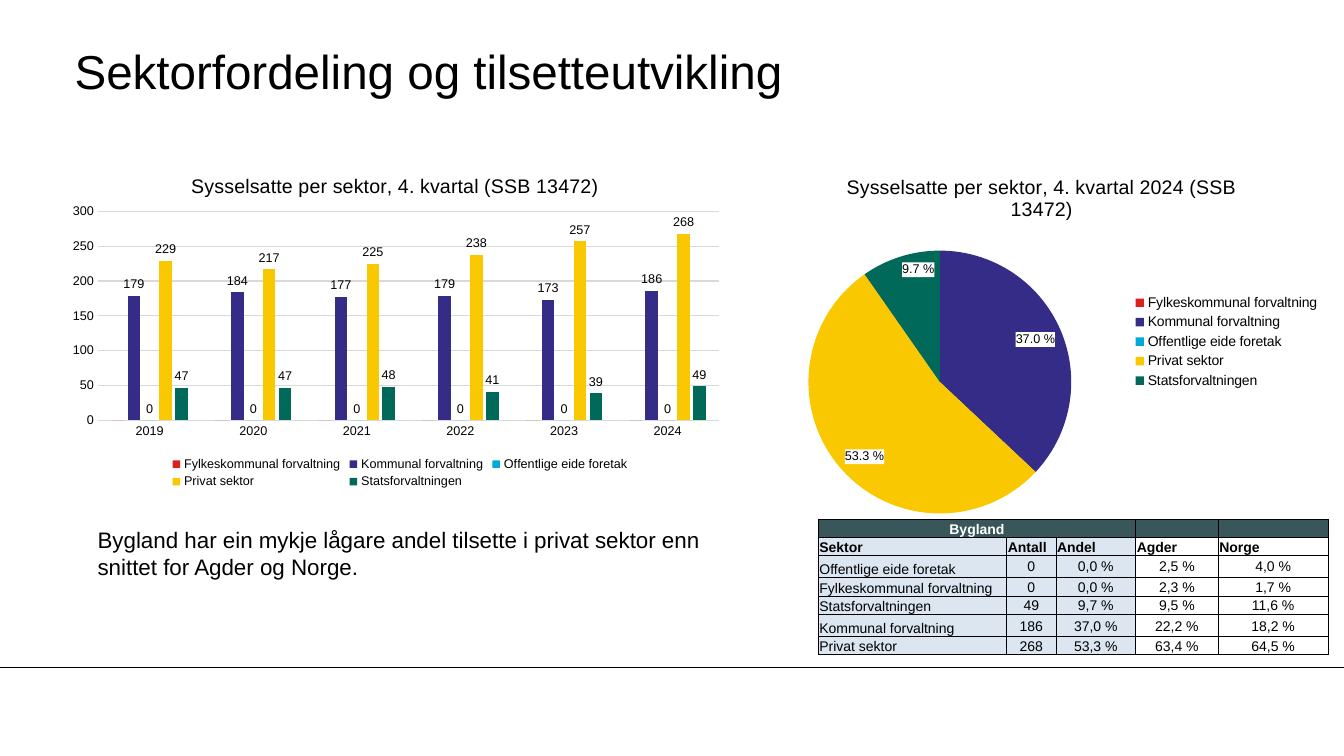
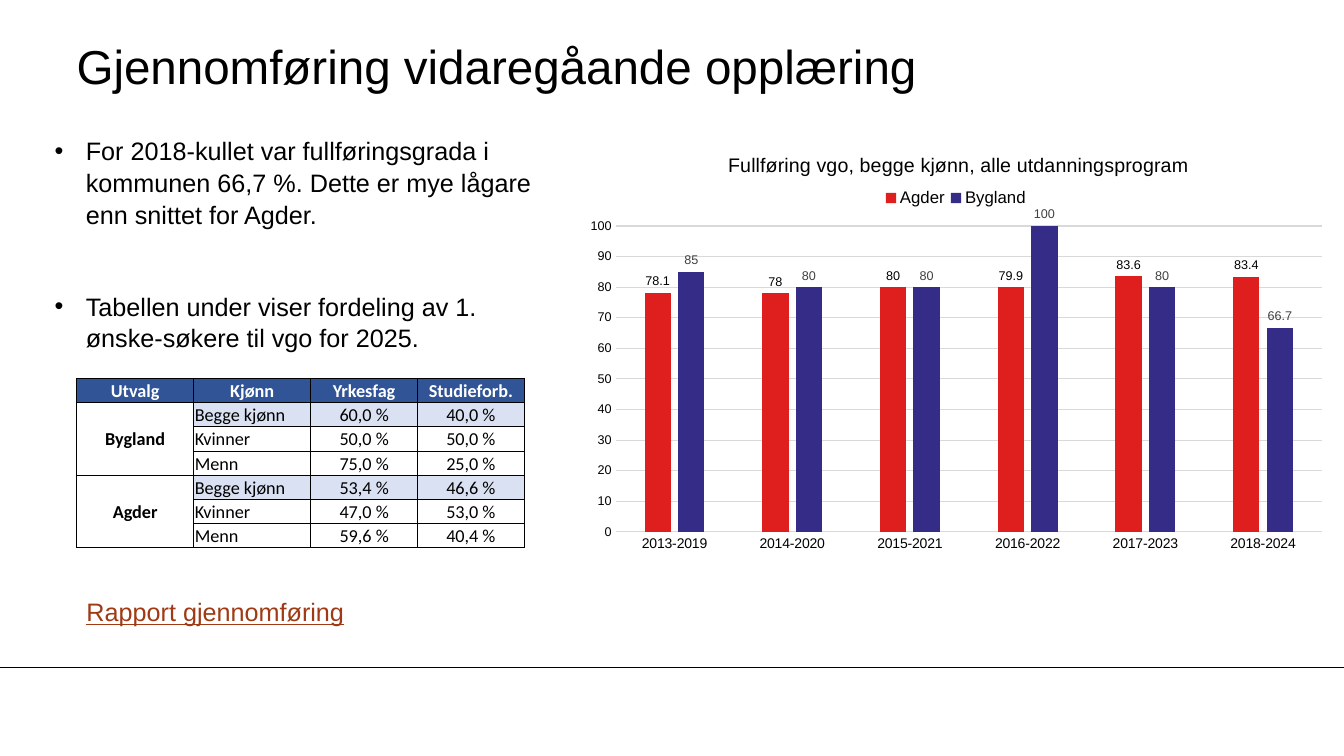
from lxml.etree import SubElement
from pptx import Presentation
from pptx.chart.data import CategoryChartData
from pptx.dml.color import RGBColor
from pptx.enum.chart import XL_CHART_TYPE as ChartType
from pptx.enum.chart import XL_LABEL_POSITION as LabelPosition
from pptx.enum.chart import XL_LEGEND_POSITION as LegendPosition
from pptx.enum.chart import XL_TICK_MARK as TickMark
from pptx.enum.shapes import MSO_CONNECTOR as Connector
from pptx.enum.text import MSO_ANCHOR as Anchor
from pptx.enum.text import MSO_AUTO_SIZE as AutoSize
from pptx.enum.text import PP_ALIGN as Align
from pptx.oxml import parse_xml
from pptx.oxml.ns import nsdecls, qn
from pptx.util import Cm, Pt

BLACK, WHITE, GREY = "000000", "FFFFFF", "D9D9D9"
RED, INDIGO, BLUE, YELLOW, GREEN = "DF1F1D", "342C86", "00A9DA", "FAC800", "00695A"
MARGINS = ("margin_left", "margin_top", "margin_right", "margin_bottom")


def style_font(font, size, color=BLACK, **values):
    for name, value in {"name": "Arial", "size": Pt(size), **values}.items():
        setattr(font, name, value)
    font.color.rgb = RGBColor.from_string(color)


def place_part(parent, index, box, target=""):
    for old in parent.findall(qn("c:layout")):
        parent.remove(old)
    layout = parse_xml(f"<c:layout {nsdecls('c')}><c:manualLayout/></c:layout>")
    values = [("layoutTarget", target)] if target else []
    values += [("xMode", "edge"), ("yMode", "edge"), *zip("xywh", map(str, box))]
    for name, value in values:
        SubElement(layout[0], qn(f"c:{name}")).set("val", value)
    parent.insert(index, layout)


presentation = Presentation()
presentation.slide_width, presentation.slide_height = Cm(33.87), Cm(19.05)

titles = [
    (5, "Sektorfordeling og tilsetteutvikling", 1.88, 0.81),
    (1, "Gjennomføring vidaregåande opplæring", 1.93, 0.69),
]
slides = []
for layout_index, text, left, top in titles:
    slide = presentation.slides.add_slide(presentation.slide_layouts[layout_index])
    slides.append(slide)
    title = slide.shapes.title
    title.left, title.top, title.width, title.height = map(Cm, (left, top, 28.19, 1.91))
    frame = title.text_frame
    for name in MARGINS:
        setattr(frame, name, 0)
    frame.auto_size, frame.vertical_anchor = AutoSize.NONE, Anchor.MIDDLE
    frame.text = text
    frame.paragraphs[0].alignment = Align.LEFT
    style_font(frame.paragraphs[0].runs[0].font, 34)
    line = slide.shapes.add_connector(Connector.STRAIGHT, 0, Cm(16.81), Cm(33.87), Cm(16.81))
    line.line.width = Pt(0.75)
    line.line.color.rgb = RGBColor.from_string(BLACK)
    SubElement(line.element.spPr, qn("a:effectLst"))

sector_slide, completion_slide = slides

body = completion_slide.placeholders[1]
body.left, body.top, body.width, body.height = map(Cm, (1.12, 3.25, 13.13, 5.64))
body.text_frame.auto_size = AutoSize.NONE
body.text_frame.text = (
    "For 2018-kullet var fullføringsgrada i kommunen 66,7 %. Dette er mye lågare enn snittet for Agder.\n"
    "Tabellen under viser fordeling av 1. ønske-søkere til vgo for 2025."
)
for paragraph, space in zip(body.text_frame.paragraphs, (0, 43)):
    properties = paragraph._p.get_or_add_pPr()
    properties.set("marL", str(Cm(0.79)))
    properties.set("indent", str(-Cm(0.79)))
    paragraph.space_before, paragraph.line_spacing = Pt(space), 1.05
    style_font(paragraph.runs[0].font, 18)

notes = [
    (sector_slide, (2.21, 13.13, 16.28, 1.63), 16, BLACK, False,
     "Bygland har ein mykje lågare andel tilsette i privat sektor enn snittet for Agder og Norge."),
    (completion_slide, (1.93, 14.91, 7.14, 1.02), 18, "9F3A14", True, "Rapport gjennomføring"),
]
for slide, box, size, color, underline, text in notes:
    frame = slide.shapes.add_textbox(*map(Cm, box)).text_frame
    frame.word_wrap = True
    frame.text = text
    style_font(frame.paragraphs[0].runs[0].font, size, color, underline=underline)

sectors = ["Fylkeskommunal forvaltning", "Kommunal forvaltning", "Offentlige eide foretak",
           "Privat sektor", "Statsforvaltningen"]
sector_colors = [RED, INDIGO, BLUE, YELLOW, GREEN]
sector_values = [[0] * 6, [179, 184, 177, 179, 173, 186], [0] * 6,
                 [229, 217, 225, 238, 257, 268], [47, 47, 48, 41, 39, 49]]
charts = [
    {
        "slide": sector_slide,
        "kind": ChartType.COLUMN_CLUSTERED,
        "box": (1.5, 3.84, 16.99, 8.64),
        "title": "Sysselsatte per sektor, 4. kvartal (SSB 13472)",
        "title_at": (0.19, 0.05),
        "plot_at": (0.057, 0.172, 0.922, 0.61),
        "legend": (LegendPosition.BOTTOM, 9, (0.16, 0.88, 0.69, 0.11)),
        "categories": [str(year) for year in range(2019, 2025)],
        "series": list(zip(sectors, sector_values)),
        "colors": sector_colors,
        "label_colors": [None] + [BLACK] * 4,
        "axis": (300, 50, 9),
    },
    {
        "slide": sector_slide,
        "kind": ChartType.PIE,
        "box": (18.92, 3.84, 14.53, 9.45),
        "title": "Sysselsatte per sektor, 4. kvartal 2024 (SSB 13472)",
        "title_at": (0.16, 0.05),
        "plot_at": (0.1, 0.262, 0.456, 0.701),
        "legend": (LegendPosition.RIGHT, 10, (0.66, 0.37, 0.33, 0.27)),
        "categories": sectors,
        "series": [("Andel", [0, 37, 0, 53.3, 9.7])],
        "colors": sector_colors,
    },
    {
        "slide": completion_slide,
        "kind": ChartType.COLUMN_CLUSTERED,
        "box": (14.5, 3.25, 19.18, 10.87),
        "title": "Fullføring vgo, begge kjønn, alle utdanningsprogram",
        "title_at": (0.196, 0.045),
        "plot_at": (0.053, 0.225, 0.928, 0.709),
        "legend": (LegendPosition.TOP, 12, (0.4, 0.13, 0.2, 0.06)),
        "categories": [f"{year}-{year + 6}" for year in range(2013, 2019)],
        "series": [("Agder", [78.1, 78, 80, 79.9, 83.6, 83.4]),
                   ("Bygland", [85, 80, 80, 100, 80, 66.7])],
        "colors": [RED, INDIGO],
        "label_colors": [BLACK, "404040"],
        "axis": (100, 10, 10),
    },
]
for item in charts:
    data = CategoryChartData()
    data.categories = item["categories"]
    for name, values in item["series"]:
        data.add_series(name, values)
    shape = item["slide"].shapes.add_chart(item["kind"], *map(Cm, item["box"]), data)
    chart = shape.chart
    style_font(chart.font, 10)
    chart.has_title = chart.has_legend = True
    chart.chart_title.text_frame.text = item["title"]
    style_font(chart.chart_title.text_frame.paragraphs[0].runs[0].font, 14, bold=False)
    position, legend_size, legend_at = item["legend"]
    chart.legend.position = position
    chart.legend.include_in_layout = False
    style_font(chart.legend.font, legend_size)
    parts = chart._chartSpace.chart
    place_part(parts.find(qn("c:title")), 1, item["title_at"])
    place_part(parts.find(qn("c:legend")), 1, legend_at)
    place_part(parts.find(qn("c:plotArea")), 0, item["plot_at"], "inner")

    plot = chart.plots[0]
    is_pie = item["kind"] == ChartType.PIE
    plot.vary_by_categories = is_pie
    if is_pie:
        series = plot.series[0]
        for index, color in enumerate(item["colors"]):
            fill = series.points[index].format.fill
            fill.solid()
            fill.fore_color.rgb = RGBColor.from_string(color)
        labels = series.data_labels
        for name, value in {"show_value": False, "show_percentage": True, "number_format": "0.0\\ %",
                            "number_format_is_linked": False,
                            "position": LabelPosition.INSIDE_END}.items():
            setattr(labels, name, value)
        style_font(labels.font, 9)
        labels._element.find(qn("c:numFmt")).addnext(parse_xml(
            f"<c:spPr {nsdecls('c', 'a')}><a:solidFill><a:srgbClr val='{WHITE}'/></a:solidFill></c:spPr>"))
        for place, index in enumerate((0, 2)):
            labels._element.insert(place, parse_xml(
                f"<c:dLbl {nsdecls('c')}><c:idx val='{index}'/><c:delete val='1'/></c:dLbl>"))
        continue

    plot.gap_width, plot.overlap = 219, -27
    for series, color, label_color in zip(plot.series, item["colors"], item["label_colors"]):
        series.format.fill.solid()
        series.format.fill.fore_color.rgb = RGBColor.from_string(color)
        if label_color:
            labels = series.data_labels
            labels.show_value, labels.position = True, LabelPosition.OUTSIDE_END
            style_font(labels.font, 9, label_color)
    maximum, step, category_size = item["axis"]
    value_axis, category_axis = chart.value_axis, chart.category_axis
    for name, value in {"minimum_scale": 0, "maximum_scale": maximum, "major_unit": step}.items():
        setattr(value_axis, name, value)
    for axis, size in ((value_axis, 9), (category_axis, category_size)):
        axis.major_tick_mark = axis.minor_tick_mark = TickMark.NONE
        style_font(axis.tick_labels.font, size)
    value_axis.tick_labels.number_format = "#,##0"
    value_axis.tick_labels.number_format_is_linked = False
    value_axis.format.line.fill.background()
    for line_format in (value_axis.major_gridlines.format.line, category_axis.format.line):
        line_format.width = Pt(0.75)
        line_format.color.rgb = RGBColor.from_string(GREY)

tables = [
    {
        "slide": sector_slide,
        "at": (20.62, 13.08),
        "columns": [4.75, 1.24, 2.01, 2.08, 2.77],
        "heights": [0.46, 0.46, 0.55, 0.48, 0.46, 0.55, 0.46],
        "rows": [
            ["Bygland", "", "", "", ""],
            ["Sektor", "Antall", "Andel", "Agder", "Norge"],
            ["Offentlige eide foretak", "0", "0,0 %", "2,5 %", "4,0 %"],
            ["Fylkeskommunal forvaltning", "0", "0,0 %", "2,3 %", "1,7 %"],
            ["Statsforvaltningen", "49", "9,7 %", "9,5 %", "11,6 %"],
            ["Kommunal forvaltning", "186", "37,0 %", "22,2 %", "18,2 %"],
            ["Privat sektor", "268", "53,3 %", "63,4 %", "64,5 %"],
        ],
        "merges": [((0, 0), (0, 2))],
        "font": ("Arial", 10),
        "fills": ("39575B", "DCE6F1"),
        "tinted": lambda row, column: column < 3,
        "bold": lambda row, column: row == 1,
        "left": lambda row, column: row == 1 or column == 0,
        "middle": lambda row, column: row > 1 and column > 0,
    },
    {
        "slide": completion_slide,
        "at": (1.93, 9.53),
        "columns": [2.95, 2.95, 2.69, 2.69],
        "heights": [0.61] * 7,
        "rows": [
            ["Utvalg", "Kjønn", "Yrkesfag", "Studieforb."],
            ["Bygland", "Begge kjønn", "60,0 %", "40,0 %"],
            ["", "Kvinner", "50,0 %", "50,0 %"],
            ["", "Menn", "75,0 %", "25,0 %"],
            ["Agder", "Begge kjønn", "53,4 %", "46,6 %"],
            ["", "Kvinner", "47,0 %", "53,0 %"],
            ["", "Menn", "59,6 %", "40,4 %"],
        ],
        "merges": [((1, 0), (3, 0)), ((4, 0), (6, 0))],
        "font": ("Calibri", 13),
        "fills": ("305496", "D9E1F2"),
        "tinted": lambda row, column: row in (1, 4) and column > 0,
        "bold": lambda row, column: column == 0,
        "left": lambda row, column: column == 1,
        "middle": lambda row, column: column == 0,
    },
]
for item in tables:
    widths, heights = item["columns"], item["heights"]
    shape = item["slide"].shapes.add_table(
        len(heights), len(widths), *map(Cm, item["at"]), Cm(sum(widths)), Cm(sum(heights)))
    table = shape.table
    table.first_row = table.horz_banding = False
    for column, width in zip(table.columns, widths):
        column.width = Cm(width)
    for row, height in zip(table.rows, heights):
        row.height = Cm(height)
    font_name, size = item["font"]
    header_fill, tint = item["fills"]
    for row_index, texts in enumerate(item["rows"]):
        for column_index, text in enumerate(texts):
            cell, spot = table.cell(row_index, column_index), (row_index, column_index)
            is_header = row_index == 0
            for name, margin in zip(MARGINS, (0.03, 0.03, 0.03, 0)):
                setattr(cell, name, Cm(margin))
            is_middle = not is_header and item["middle"](*spot)
            cell.vertical_anchor = Anchor.MIDDLE if is_middle else Anchor.BOTTOM
            for side in "LRTB":
                cell._tc.get_or_add_tcPr().append(parse_xml(
                    f"<a:ln{side} {nsdecls('a')} w='{Pt(0.5)}'><a:solidFill>"
                    f"<a:srgbClr val='{BLACK}'/></a:solidFill></a:ln{side}>"))
            cell.fill.solid()
            cell.fill.fore_color.rgb = RGBColor.from_string(
                header_fill if is_header else tint if item["tinted"](*spot) else WHITE)
            paragraph = cell.text_frame.paragraphs[0]
            if not text:
                SubElement(paragraph._p, qn("a:endParaRPr")).set("sz", str(size * 100))
                continue
            is_left = not is_header and item["left"](*spot)
            paragraph.alignment = Align.LEFT if is_left else Align.CENTER
            run = paragraph.add_run()
            run.text = text
            style_font(run.font, size, WHITE if is_header else BLACK, name=font_name,
                       bold=is_header or item["bold"](*spot))
    for first, last in item["merges"]:
        table.cell(*first).merge(table.cell(*last))

presentation.save("out.pptx")
